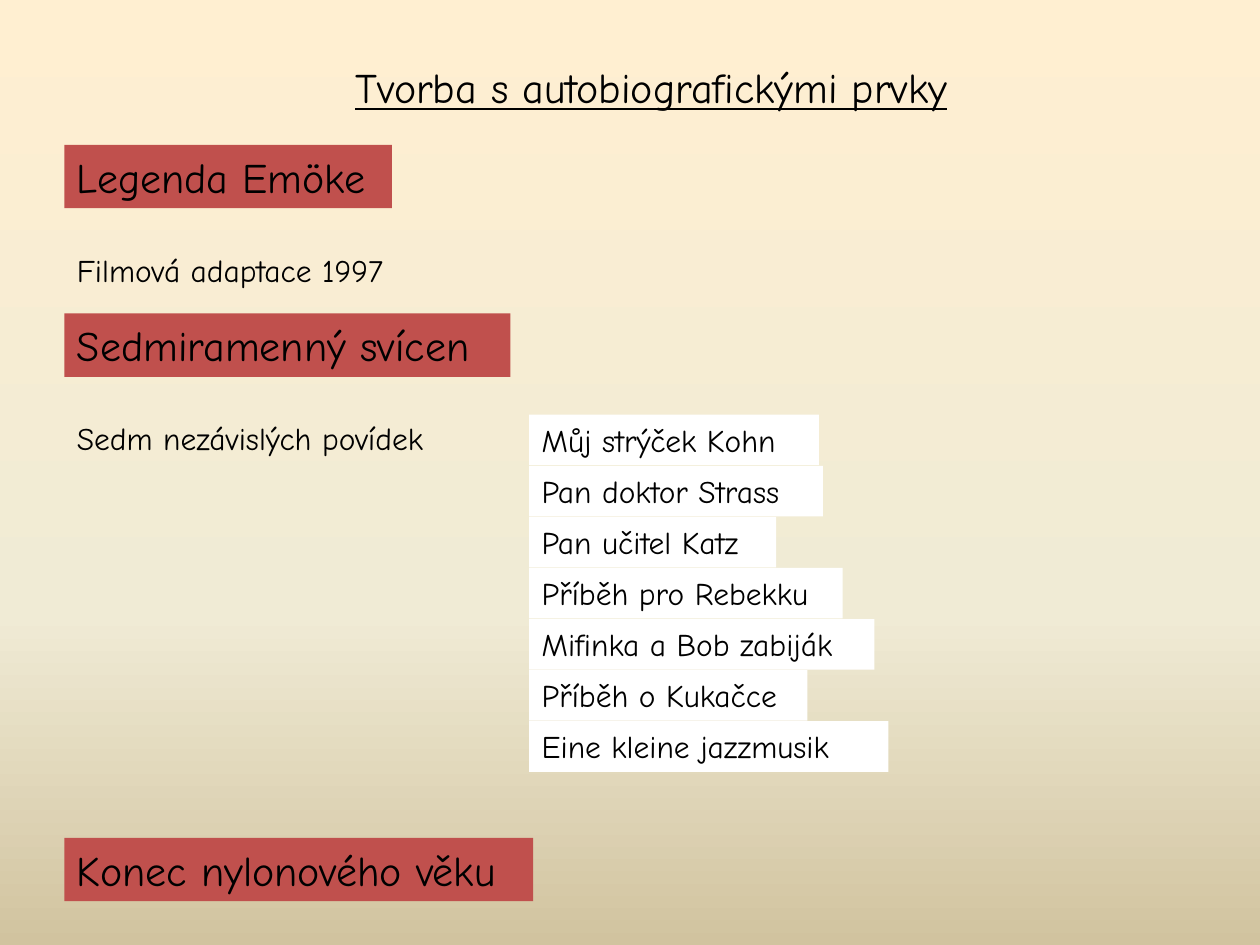
from copy import deepcopy

from pptx import Presentation
from pptx.dml.color import RGBColor
from pptx.enum.shapes import MSO_SHAPE
from pptx.enum.text import MSO_ANCHOR as Anchor, PP_ALIGN as Align
from pptx.oxml.ns import qn
from pptx.util import Cm, Pt

BLACK = RGBColor(0x00, 0x00, 0x00)
WHITE = RGBColor(0xFF, 0xFF, 0xFF)
RED = RGBColor(0xC0, 0x50, 0x4D)
BACKGROUND_STOPS = [
    (0, RGBColor(0xFF, 0xEF, 0xD1)),
    (0.65, RGBColor(0xF0, 0xEB, 0xD5)),
    (1, RGBColor(0xD1, 0xC3, 0x9F)),
]

FONT = "Comic Neue"
HEADING_SIZE, BODY_SIZE = 24, 18
HEADING_HEIGHT, BODY_HEIGHT = 1.28, 1.02
LEFT = 1.3
STORY_LEFT, STORY_TOP, STORY_PITCH = 10.67, 8.36, 1.03

# text, top, width
BOOKS = [
    ("Legenda Emöke", 2.92, 6.6),
    ("Sedmiramenný svícen", 6.32, 8.99),
    ("Konec nylonového věku", 16.89, 9.45),
]
NOTES = [
    ("Filmová adaptace 1997", 4.93, 7.26),
    ("Sedm nezávislých povídek", 8.33, 8.18),
]
# text, width
STORIES = [
    ("Můj strýček Kohn", 5.84),
    ("Pan doktor Strass", 5.92),
    ("Pan učitel Katz", 4.98),
    ("Příběh pro Rebekku", 6.32),
    ("Mifinka a Bob zabiják", 6.96),
    ("Příběh o Kukačce", 5.61),
    ("Eine kleine jazzmusik", 7.24),
]


def paint_background(slide):
    fill = slide.background.fill
    fill.gradient()
    fill.gradient_angle = 270
    stop_list = slide.element.find(".//" + qn("a:gsLst"))
    stop_list.append(deepcopy(stop_list[-1]))
    for stop, (position, color) in zip(fill.gradient_stops, BACKGROUND_STOPS):
        stop.position = position
        stop.color.rgb = color


def write_text(shape, text, size, underline=None):
    frame = shape.text_frame
    frame.text = text
    frame.word_wrap = True
    frame.vertical_anchor = Anchor.TOP
    para = frame.paragraphs[0]
    para.alignment = Align.LEFT
    font = para.runs[0].font
    font.name = FONT
    font.size = Pt(size)
    font.color.rgb = BLACK
    font.underline = underline


def place_title(slide, text):
    title = slide.shapes.title
    title.left, title.top = Cm(6.91), Cm(1.12)
    title.width, title.height = Cm(13.84), Cm(HEADING_HEIGHT)
    write_text(title, text, HEADING_SIZE, underline=True)


def add_label(slide, text, left, top, width, height, size, color):
    label = slide.shapes.add_shape(
        MSO_SHAPE.RECTANGLE, Cm(left), Cm(top), Cm(width), Cm(height))
    label.shadow.inherit = False
    label.fill.solid()
    label.fill.fore_color.rgb = color
    label.line.fill.background()
    write_text(label, text, size)


def add_note(slide, text, top, width):
    box = slide.shapes.add_textbox(Cm(LEFT), Cm(top), Cm(width), Cm(BODY_HEIGHT))
    write_text(box, text, BODY_SIZE)


def main():
    deck = Presentation()
    deck.slide_width, deck.slide_height = Cm(25.4), Cm(19.05)
    slide = deck.slides.add_slide(deck.slide_layouts[5])
    paint_background(slide)
    place_title(slide, "Tvorba s autobiografickými prvky")
    for text, top, width in BOOKS:
        add_label(slide, text, LEFT, top, width, HEADING_HEIGHT, HEADING_SIZE, RED)
    for text, top, width in NOTES:
        add_note(slide, text, top, width)
    for row, (text, width) in enumerate(STORIES):
        add_label(slide, text, STORY_LEFT, STORY_TOP + row * STORY_PITCH,
                  width, BODY_HEIGHT, BODY_SIZE, WHITE)
    deck.save("out.pptx")


if __name__ == "__main__":
    main()
